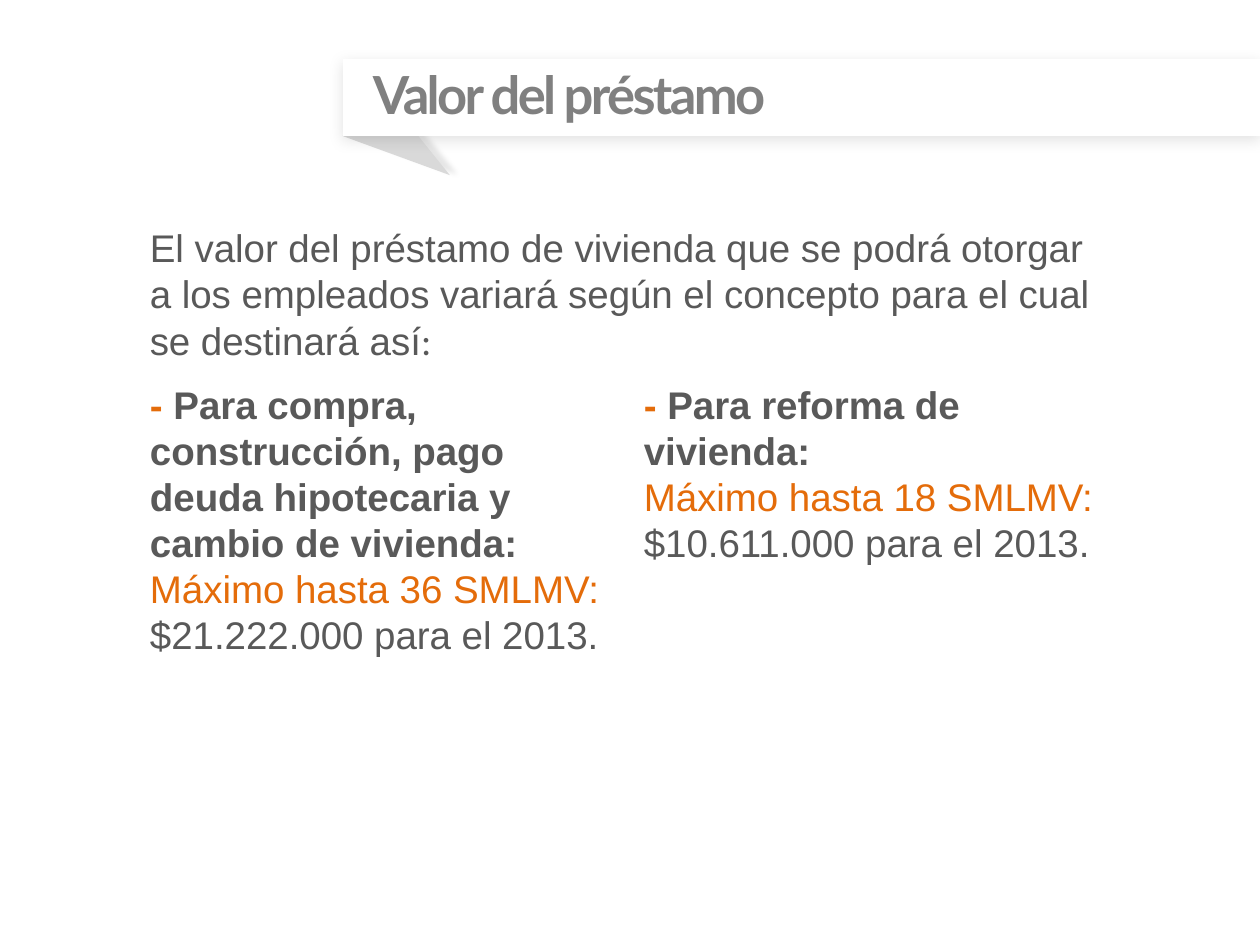
from dataclasses import dataclass

from lxml.etree import SubElement
from pptx import Presentation
from pptx.dml.color import RGBColor
from pptx.enum.shapes import MSO_SHAPE as Preset
from pptx.enum.text import MSO_ANCHOR as Anchor, MSO_AUTO_SIZE as AutoSize, PP_ALIGN as Align
from pptx.oxml.ns import qn
from pptx.util import Inches, Pt


@dataclass(frozen=True)
class Theme:
    """Colours, fonts and type sizes of the slide."""
    paper: str = "FFFFFF"
    fold: str = "D9D9D9"
    shade: str = "000000"
    heading: str = "808080"
    ink: str = "595959"
    accent: str = "E46C0A"
    heading_font: str = "Lato"
    body_font: str = "Arial"
    colon_font: str = "Calibri"
    heading_size: int = 30
    body_size: int = 22


THEME = Theme()


def add_span(para, text, color=THEME.ink, font=THEME.body_font, size=THEME.body_size,
             bold=False, spacing=None):
    """Append formatted text to a paragraph."""
    span = para.add_run()
    span.text = text
    span.font.name = font
    span.font.size = Pt(size)
    span.font.bold = bold
    span.font.color.rgb = RGBColor.from_string(color)
    if spacing is not None:
        span.font._element.set("spc", str(int(spacing * 100)))


def place(box, left, top, width, height):
    """Position a text box or placeholder and prepare its frame."""
    box.left, box.top, box.width, box.height = map(Inches, (left, top, width, height))
    frame = box.text_frame
    frame.word_wrap = True
    frame.auto_size = AutoSize.NONE
    frame.vertical_anchor = Anchor.TOP
    return frame


def plain(para):
    """Left-align a paragraph and clear its inherited bullet, indent and space."""
    properties = para._p.get_or_add_pPr()
    properties.set("marL", "0")
    properties.set("indent", "0")
    SubElement(properties, qn("a:buNone"))
    para.alignment = Align.LEFT
    para.space_before = Pt(0)
    return para


def style_shape(shape, fill, alpha, blur, distance, angle):
    """Fill a borderless shape and give it a soft shadow."""
    shape.fill.solid()
    shape.fill.fore_color.rgb = RGBColor.from_string(fill)
    shape.line.fill.background()
    shape.shadow.inherit = False
    effects = shape.element.spPr.find(qn("a:effectLst"))
    shadow = SubElement(effects, qn("a:outerShdw"), blurRad=str(Pt(blur)),
                        dist=str(Pt(distance)), dir=str(angle * 60000),
                        algn="ctr", rotWithShape="0")
    color = SubElement(shadow, qn("a:srgbClr"), val=THEME.shade)
    SubElement(color, qn("a:alpha"), val=str(alpha * 1000))


def add_ribbon(page):
    """Draw the folded ribbon behind the title."""
    builder = page.shapes.build_freeform(Inches(2.72), Inches(1.08))
    corners = [(3.03, 0.72), (3.57, 1.39)]
    builder.add_line_segments([(Inches(x), Inches(y)) for x, y in corners], close=True)
    fold = builder.convert_to_shape()
    style_shape(fold, THEME.fold, alpha=9, blur=3, distance=4, angle=355)
    band = page.shapes.add_shape(Preset.FLOWCHART_PROCESS, Inches(2.72), Inches(0.47),
                                 Inches(7.28), Inches(0.61))
    style_shape(band, THEME.paper, alpha=11, blur=8, distance=1.8, angle=90)
    for shape in (fold, band):
        page.shapes.title.element.addprevious(shape.element)


def add_title(page, text):
    """Set the slide title on the ribbon."""
    frame = place(page.shapes.title, 2.86, 0.44, 4.66, 0.61)
    add_span(plain(frame.paragraphs[0]), text, color=THEME.heading, bold=True,
             font=THEME.heading_font, size=THEME.heading_size, spacing=-1.5)


def add_intro(page, text):
    """Add the introduction with its closing colon."""
    box = page.shapes.add_textbox(0, 0, 0, 0)
    para = place(box, 1.09, 1.73, 7.81, 1.21).paragraphs[0]
    add_span(para, text)
    add_span(para, ":", font=THEME.colon_font)


def fill_option(box, left, height, purpose, limit, amount):
    """Write one loan purpose and its maximum amount."""
    frame = place(box, left, 2.97, 3.91, height)
    para = plain(frame.paragraphs[0])
    add_span(para, "-", color=THEME.accent, bold=True)
    add_span(para, f" {purpose}", bold=True)
    para = plain(frame.add_paragraph())
    add_span(para, f"{limit} ", color=THEME.accent)
    add_span(para, amount)


def main():
    """Build and save the slide."""
    deck = Presentation()
    deck.slide_width, deck.slide_height = Inches(10), Inches(7.5)
    page = deck.slides.add_slide(deck.slide_layouts[3])
    add_ribbon(page)
    add_title(page, "Valor del préstamo")
    add_intro(page, "El valor del préstamo de vivienda que se podrá otorgar a los empleados "
                    "variará según el concepto para el cual se destinará así")
    fill_option(page.placeholders[1], 1.09, 2.32,
                "Para compra, construcción, pago deuda hipotecaria y cambio de vivienda:",
                "Máximo hasta 36 SMLMV:", "$21.222.000 para el 2013.")
    fill_option(page.placeholders[2], 5.01, 1.58, "Para reforma de vivienda:",
                "Máximo hasta 18 SMLMV:", "$10.611.000 para el 2013.")
    deck.save("out.pptx")


if __name__ == "__main__":
    main()
